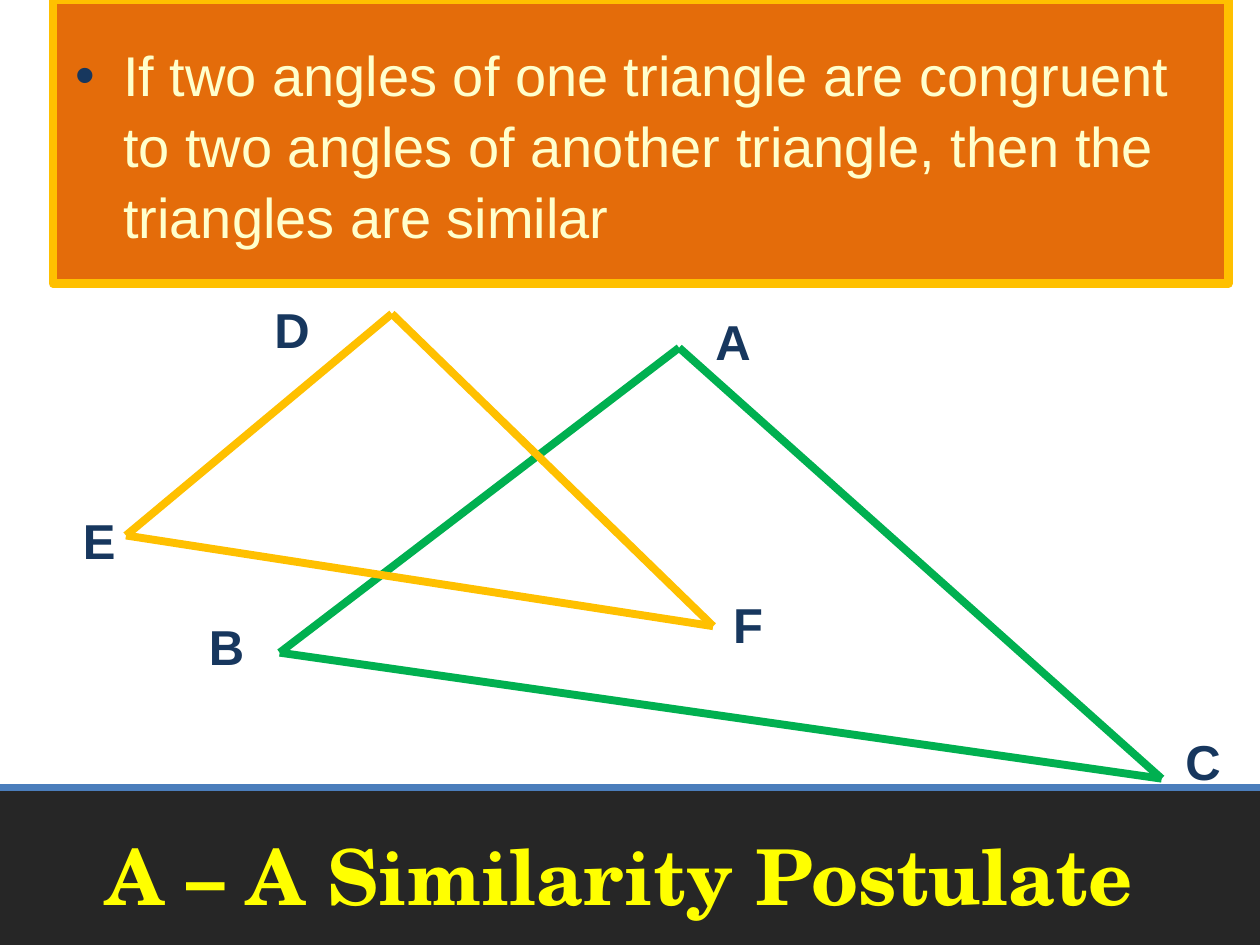
import dataclasses
import itertools

import pptx
import pptx.dml.color
import pptx.enum.shapes
import pptx.enum.text
import pptx.oxml
import pptx.oxml.ns
import pptx.util


@dataclasses.dataclass(frozen=True)
class Theme:
    paper: str = "FFFFFF"
    band: str = "262626"
    rule: str = "4B7EBC"
    panel: str = "E46C0A"
    gold: str = "FFC000"
    green: str = "00B050"
    navy: str = "17375E"
    cream: str = "FFFFCC"
    yellow: str = "FFFF00"
    title_font: str = "TeX Gyre Schola"
    body_font: str = "Arial"
    title_size: int = 44
    body_size: int = 32
    label_size: int = 28
    side_width: float = 4.5
    rule_width: float = 4
    frame_width: float = 5


class SlideBuilder:
    """Draws on one slide, with lengths in columns and rows of a 100 by 75 grid."""

    def __init__(self, presentation, theme):
        self.theme = theme
        self.column = presentation.slide_width / 100
        self.row = presentation.slide_height / 75
        self.slide = presentation.slides.add_slide(presentation.slide_layouts[6])
        self.slide.background.fill.solid()
        self.slide.background.fill.fore_color.rgb = self.color(theme.paper)

    def color(self, value):
        return pptx.dml.color.RGBColor.from_string(value)

    def point(self, column, row):
        return round(column * self.column), round(row * self.row)

    def box(self, left, top, width, height):
        return self.point(left, top) + self.point(width, height)

    def stroke(self, line, color, width):
        line.color.rgb = self.color(color)
        line.width = pptx.util.Pt(width)

    def rectangle(self, area, fill, frame=None):
        shape = self.slide.shapes.add_shape(
            pptx.enum.shapes.MSO_SHAPE.RECTANGLE, *self.box(*area))
        shape.shadow.inherit = False
        shape.fill.solid()
        shape.fill.fore_color.rgb = self.color(fill)
        if frame:
            self.stroke(shape.line, frame, self.theme.frame_width)
        else:
            shape.line.fill.background()

    def line(self, start, end, color, width):
        connector = self.slide.shapes.add_connector(
            pptx.enum.shapes.MSO_CONNECTOR.STRAIGHT, *self.point(*start), *self.point(*end))
        self.stroke(connector.line, color, width)
        properties = connector._element.spPr
        properties.append(properties.makeelement(pptx.oxml.ns.qn("a:effectLst"), {}))

    def text(self, area, words, font, size, color, bold=False, wrap=True):
        shape = self.slide.shapes.add_textbox(*self.box(*area))
        shape.text_frame.word_wrap = wrap
        paragraph = shape.text_frame.paragraphs[0]
        run = paragraph.add_run()
        run.text = words
        run.font.name = font
        run.font.size = pptx.util.Pt(size)
        run.font.bold = bold
        run.font.color.rgb = self.color(color)
        return shape.text_frame, paragraph

    def title(self, area, words):
        theme = self.theme
        frame, paragraph = self.text(
            area, words, theme.title_font, theme.title_size, theme.yellow, bold=True)
        frame.vertical_anchor = pptx.enum.text.MSO_ANCHOR.MIDDLE
        paragraph.alignment = pptx.enum.text.PP_ALIGN.CENTER

    def bullet(self, area, words):
        theme = self.theme
        paragraph = self.text(
            area, words, theme.body_font, theme.body_size, theme.cream)[1]
        paragraph.line_spacing = 1.05
        paragraph.space_before = pptx.util.Pt(1)
        properties = paragraph._p.get_or_add_pPr()
        indent = pptx.util.Inches(0.38)
        properties.set("marL", str(indent))
        properties.set("indent", str(-indent))
        namespace = pptx.oxml.ns.nsdecls("a")
        for markup in (
            f'<a:buClr {namespace}><a:srgbClr val="{theme.navy}"/></a:buClr>',
            f'<a:buFont {namespace} typeface="{theme.body_font}"/>',
            f'<a:buChar {namespace} char="•"/>',
        ):
            properties.append(pptx.oxml.parse_xml(markup))

    def triangle(self, vertices, color):
        for start, end in itertools.combinations(vertices, 2):
            self.line(start, end, color, self.theme.side_width)

    def label(self, letter, left, top, width=4.9):
        theme = self.theme
        frame = self.text((left, top, width, 5.7), letter, theme.body_font,
                          theme.label_size, theme.navy, bold=True, wrap=False)[0]
        frame.auto_size = pptx.enum.text.MSO_AUTO_SIZE.SHAPE_TO_FIT_TEXT


def main():
    presentation = pptx.Presentation()
    presentation.slide_width = pptx.util.Inches(10)
    presentation.slide_height = pptx.util.Inches(7.5)
    theme = Theme()
    builder = SlideBuilder(presentation, theme)

    builder.rectangle((0, 62.5, 100, 12.5), theme.band)
    builder.line((0, 62.5), (100, 62.5), theme.rule, theme.rule_width)
    builder.rectangle((4.2, 0, 93.3, 22.5), theme.panel, theme.gold)
    builder.title((4.2, 61.7, 90, 15.5), "A – A Similarity Postulate")
    builder.bullet((5, 2.5, 90, 18.3),
                   "If two angles of one triangle are congruent to two angles of "
                   "another triangle, then the triangles are similar")

    builder.triangle([(22.2, 51.8), (53.9, 27.6), (92.2, 61.8)], theme.green)
    builder.triangle([(10, 42.5), (31.1, 24.9), (56.6, 49.7)], theme.gold)
    for label in (("A", 55.8, 24.2), ("B", 15.6, 48.4), ("C", 93.1, 57.6),
                  ("D", 20.8, 23.3), ("E", 5.6, 40, 4.6), ("F", 57.2, 46.7, 4.4)):
        builder.label(*label)

    presentation.save("out.pptx")


if __name__ == "__main__":
    main()
